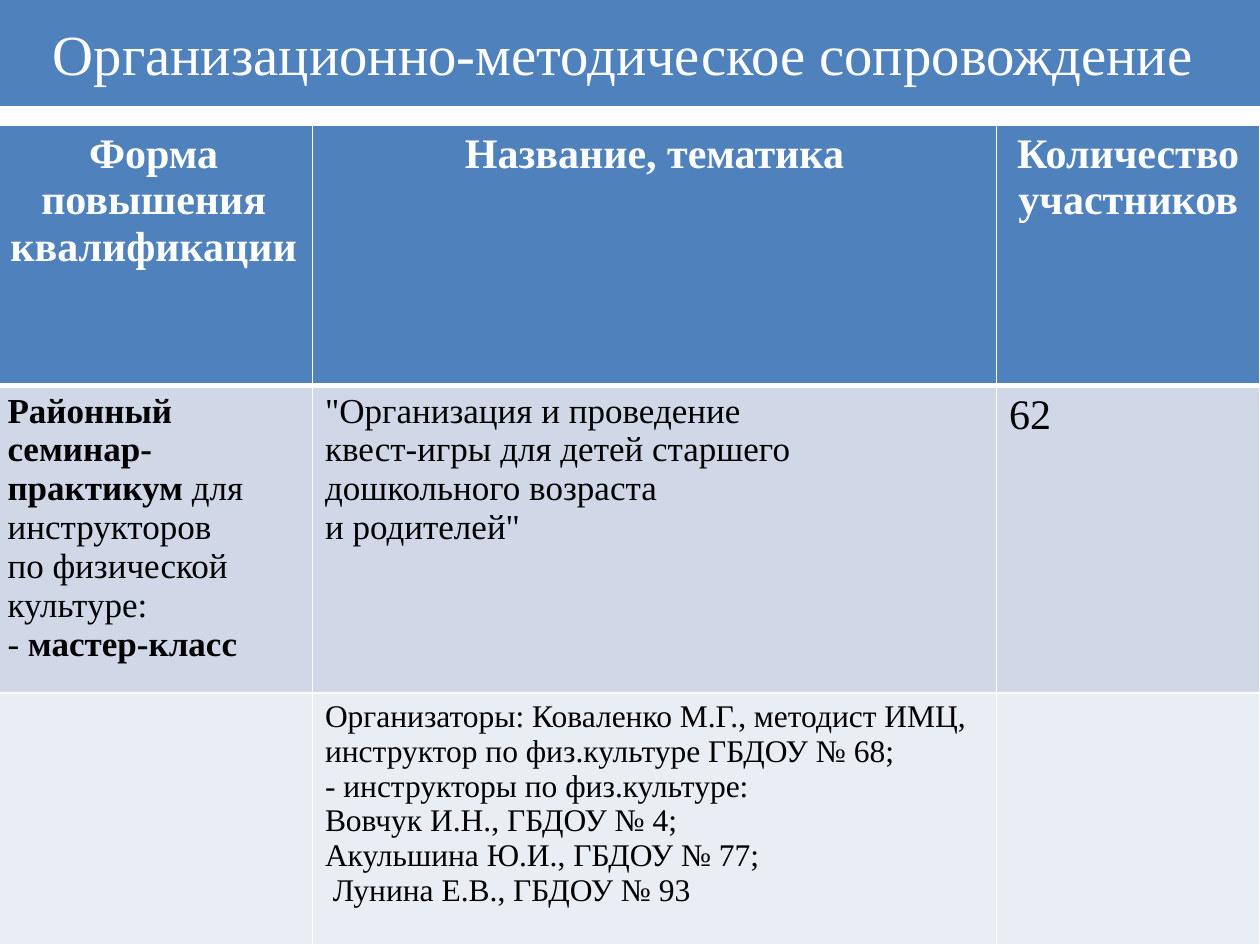
from dataclasses import dataclass

from lxml.etree import SubElement
from pptx import Presentation
from pptx.dml.color import RGBColor
from pptx.enum.text import MSO_ANCHOR, MSO_AUTO_SIZE, PP_ALIGN
from pptx.oxml.ns import qn
from pptx.util import Inches, Pt

COLORS = {
    "accent": "4F81BD",
    "band_dark": "D0D8E8",
    "band_light": "E9EDF4",
    "white": "FFFFFF",
    "black": "000000",
}
FONT = "Times New Roman"
TITLE_HEIGHT = 0.84
TITLE_INDENT = 0.56
TABLE_LEFT, TABLE_TOP = -0.04, 0.99
COLUMN_WIDTHS = (2.52, 5.43, 2.09)
ROW_HEIGHTS = (2.07, 2.44, 2)


@dataclass(frozen=True)
class Run:
    text: str
    bold: bool = False


@dataclass(frozen=True)
class Entry:
    paragraphs: tuple[tuple[Run, ...], ...] = ()
    size: float = 18


@dataclass(frozen=True)
class Row:
    fill: str
    color: str
    align: PP_ALIGN
    bottom_line: float
    entries: tuple[Entry, ...]


def lines(*texts: str, bold: bool = False) -> tuple[tuple[Run, ...], ...]:
    return tuple((Run(text, bold),) for text in texts)


ROWS = (
    Row("accent", "white", PP_ALIGN.CENTER, 3, (
        Entry(lines("Форма повышения квалификации ", bold=True), 24),
        Entry(lines("Название, тематика", bold=True), 24),
        Entry(lines("Количество участников", bold=True), 24),
    )),
    Row("band_dark", "black", PP_ALIGN.LEFT, 1, (
        Entry((
            (Run("Районный семинар-практикум", True), Run(" для инструкторов")),
            (Run("по физической культуре:"),),
            (Run("- "), Run("мастер-класс", True)),
        ), 20),
        Entry(lines(
            '"Организация и проведение',
            "квест-игры для детей старшего дошкольного возраста",
            'и родителей"',
        ), 20),
        Entry(lines("62"), 24),
    )),
    Row("band_light", "black", PP_ALIGN.LEFT, 1, (
        Entry(),
        Entry(lines(
            "Организаторы: Коваленко М.Г., методист ИМЦ, "
            "инструктор по физ.культуре ГБДОУ № 68;",
            "- инструкторы по физ.культуре:",
            "Вовчук И.Н., ГБДОУ № 4;",
            "Акульшина Ю.И., ГБДОУ № 77;",
            " Лунина Е.В., ГБДОУ № 93",
        )),
        Entry(),
    )),
)


def paint(target, color: str) -> None:
    target.fill.solid()
    target.fill.fore_color.rgb = RGBColor.from_string(COLORS[color])


def write(frame, paragraphs, *, size: float, color: str, align: PP_ALIGN) -> None:
    for index, runs in enumerate(paragraphs):
        paragraph = frame.add_paragraph() if index else frame.paragraphs[0]
        paragraph.alignment = align
        for part in runs:
            run = paragraph.add_run()
            run.text = part.text
            run.font.name = FONT
            run.font.size = Pt(size)
            run.font.bold = part.bold
            run.font.color.rgb = RGBColor.from_string(COLORS[color])


def draw_borders(cell, top: float, bottom: float) -> None:
    """Put white lines before the fill, as the schema orders them."""
    properties = cell._tc.get_or_add_tcPr()
    widths = {"lnL": 1, "lnR": 1, "lnT": top, "lnB": bottom}
    for position, (side, width) in enumerate(widths.items()):
        line = SubElement(properties, qn(f"a:{side}"), w=str(Pt(width)))
        solid = SubElement(line, qn("a:solidFill"))
        SubElement(solid, qn("a:srgbClr"), val=COLORS["white"])
        properties.insert(position, line)


def add_title(slide, width: int) -> None:
    title = slide.shapes.title
    title.left, title.top = 0, 0
    title.width, title.height = width, Inches(TITLE_HEIGHT)
    paint(title, "accent")
    frame = title.text_frame
    frame.word_wrap = True
    frame.auto_size = MSO_AUTO_SIZE.NONE
    frame.vertical_anchor = MSO_ANCHOR.MIDDLE
    write(frame, lines("Организационно-методическое сопровождение "),
          size=32.4, color="white", align=PP_ALIGN.CENTER)
    properties = frame.paragraphs[0]._p.get_or_add_pPr()
    properties.set("marL", str(Inches(TITLE_INDENT)))
    properties.set("indent", str(-Inches(TITLE_INDENT)))


def add_training_table(slide) -> None:
    table = slide.shapes.add_table(
        len(ROWS), len(COLUMN_WIDTHS), Inches(TABLE_LEFT), Inches(TABLE_TOP),
        Inches(sum(COLUMN_WIDTHS)), Inches(sum(ROW_HEIGHTS))).table
    for column, width in zip(table.columns, COLUMN_WIDTHS):
        column.width = Inches(width)
    line_above = 1
    for table_row, height, row in zip(table.rows, ROW_HEIGHTS, ROWS):
        table_row.height = Inches(height)
        for cell, entry in zip(table_row.cells, row.entries):
            paint(cell, row.fill)
            draw_borders(cell, line_above, row.bottom_line)
            write(cell.text_frame, entry.paragraphs, size=entry.size,
                  color=row.color, align=row.align)
        line_above = row.bottom_line


def main() -> None:
    deck = Presentation()
    deck.slide_width, deck.slide_height = Inches(10), Inches(7.5)
    title_only = deck.slide_layouts[5]
    slide = deck.slides.add_slide(title_only)
    add_title(slide, deck.slide_width)
    add_training_table(slide)
    deck.save("out.pptx")


if __name__ == "__main__":
    main()
